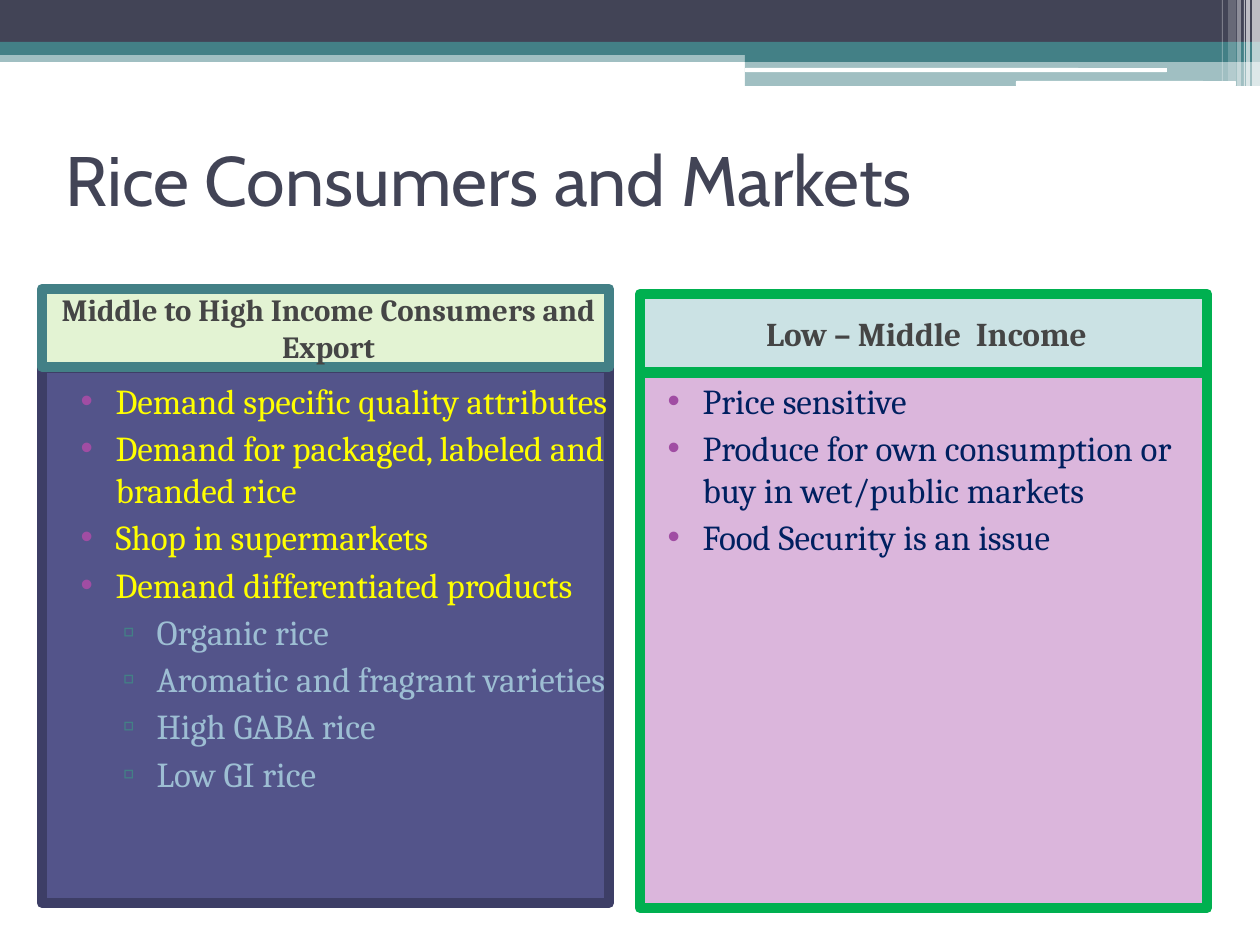
from lxml import etree
from pptx import Presentation
from pptx.dml.color import RGBColor
from pptx.enum.shapes import MSO_SHAPE
from pptx.enum.text import MSO_ANCHOR, MSO_AUTO_SIZE, PP_ALIGN
from pptx.oxml.ns import qn
from pptx.util import Pt

RECT = MSO_SHAPE.RECTANGLE
ROUNDED = MSO_SHAPE.ROUNDED_RECTANGLE
TOP, MIDDLE = MSO_ANCHOR.TOP, MSO_ANCHOR.MIDDLE
LEFT, CENTER = PP_ALIGN.LEFT, PP_ALIGN.CENTER
NO_AUTOFIT = MSO_AUTO_SIZE.NONE

EMU_PER_PX = 914400 / 126
COMPARISON_LAYOUT = 4
WHITE, NAVY, TEAL, GREEN = "FFFFFF", "424456", "438086", "00B050"
GREY, YELLOW, PALE_BLUE, DARK_BLUE = "454545", "FFFF00", "9DBED3", "002060"
BULLETS = [("•", "A04DA3", 50, -35), ("▫", TEAL, 91, -34)]

BANDS = [
    (0, 50, 1260, 12, TEAL, 50),
    (0, 0, 1260, 42, NAVY, 100),
    (0, 42, 1260, 13, TEAL, 100),
    (745, 49, 515, 13, TEAL, 100),
    (745, 61, 515, 25, TEAL, 50),
]
HIGHLIGHTS = [(745, 68, 422, 4), (1016, 81, 220, 5)]
STRIPES = [
    (1252, 8, 86, 65),
    (1246, 4, 86, 65),
    (1244, 1, 86, 60),
    (1237, 4, 86, 40),
    (1228, 8, 81, 20),
    (1222, 1, 81, 30),
]
HIGH_INCOME = [
    ("Demand specific quality attributes", 0),
    ("Demand for packaged, labeled and branded rice", 0),
    ("Shop in supermarkets", 0),
    ("Demand differentiated products", 0),
    ("Organic rice", 1),
    ("Aromatic and fragrant varieties", 1),
    ("High GABA rice", 1),
    ("Low GI rice", 1),
]
LOW_INCOME = [
    ("Price sensitive", 0),
    ("Produce for own consumption or buy in wet/public markets", 0),
    ("Food Security is an issue", 0),
]


def px(length):
    return round(length * EMU_PER_PX)


def color(value):
    return RGBColor.from_string(value)


class ConsumerSlide:
    title_font = "Cabin"
    body_font = "Cambria"
    border = Pt(6)

    def __init__(self, deck):
        self.slide = deck.slides.add_slide(deck.slide_layouts[COMPARISON_LAYOUT])

    def paint(self, shape, fill, opacity=100, line=None):
        shape.fill.solid()
        shape.fill.fore_color.rgb = color(fill)
        if opacity < 100:
            tint = shape.element.spPr.find(qn("a:solidFill"))[0]
            etree.SubElement(tint, qn("a:alpha"), val=str(opacity * 1000))
        if line:
            shape.line.color.rgb = color(line)
            shape.line.width = self.border
        else:
            shape.line.fill.background()

    def block(self, box, fill, opacity=100, line=None, outline=RECT):
        shape = self.slide.shapes.add_shape(outline, *map(px, box))
        shape.shadow.inherit = False
        self.paint(shape, fill, opacity, line)

    def place(self, idx, box, anchor):
        holder = self.slide.placeholders[idx]
        holder.element.getparent().append(holder.element)
        holder.left, holder.top, holder.width, holder.height = map(px, box)
        frame = holder.text_frame
        frame.word_wrap = True
        frame.auto_size = NO_AUTOFIT
        frame.vertical_anchor = anchor
        return holder

    def style_text(self, paragraph, font, size, ink, align=LEFT, bold=False):
        paragraph.alignment = align
        for run in paragraph.runs:
            run.font.name = font
            run.font.size = Pt(size)
            run.font.bold = bold
            run.font.color.rgb = color(ink)

    def space(self, paragraph, margin, indent):
        paragraph.space_before = Pt(3)
        paragraph.space_after = Pt(0)
        properties = paragraph._p.get_or_add_pPr()
        properties.set("marL", str(px(margin)))
        properties.set("indent", str(px(indent)))
        return properties

    def title(self, box, text):
        frame = self.place(0, box, MIDDLE).text_frame
        frame.text = text
        self.style_text(frame.paragraphs[0], self.title_font, 40, NAVY)

    def heading(self, idx, box, text, size, fill, line):
        holder = self.place(idx, box, MIDDLE)
        self.paint(holder, fill, 25, line)
        holder.text_frame.text = text
        paragraph = holder.text_frame.paragraphs[0]
        self.style_text(paragraph, self.body_font, size, GREY, CENTER, True)
        self.space(paragraph, 6, 0)

    def bullets(self, idx, box, items, inks):
        holder = self.place(idx, box, TOP)
        frame = holder.text_frame
        frame.text = "\n".join(text for text, level in items)
        for paragraph, (text, level) in zip(frame.paragraphs, items):
            mark, mark_color, margin, indent = BULLETS[level]
            self.style_text(paragraph, self.body_font, 20, inks[level])
            paragraph.level = level
            properties = self.space(paragraph, margin, indent)
            tint = etree.SubElement(properties, qn("a:buClr"))
            etree.SubElement(tint, qn("a:srgbClr"), val=mark_color)
            etree.SubElement(properties, qn("a:buChar"), char=mark)
        return holder


def main():
    deck = Presentation()
    deck.slide_width, deck.slide_height = px(1260), px(945)
    page = ConsumerSlide(deck)

    for *box, fill, opacity in BANDS:
        page.block(box, fill, opacity)
    for box in HIGHLIGHTS:
        page.block(box, WHITE, outline=ROUNDED)
    for left, width, height, opacity in STRIPES:
        page.block((left, 0, width, height), WHITE, opacity)
    page.block((42, 368, 567, 535), "53548A", line="3D3E66")

    page.title((53, 105, 1155, 147), "Rice Consumers and Markets")
    page.heading(1, (42, 289, 567, 78), "Middle to High Income Consumers and Export",
                 17.6, "92D050", TEAL)
    page.heading(3, (640, 294, 567, 78), "Low – Middle  Income",
                 19, "328E97", GREEN)
    page.bullets(2, (53, 373, 577, 535), HIGH_INCOME, (YELLOW, PALE_BLUE))
    low_income = page.bullets(4, (640, 373, 567, 535), LOW_INCOME, (DARK_BLUE,))
    page.paint(low_income, "DBB6DC", line=GREEN)

    deck.save("out.pptx")


if __name__ == "__main__":
    main()
